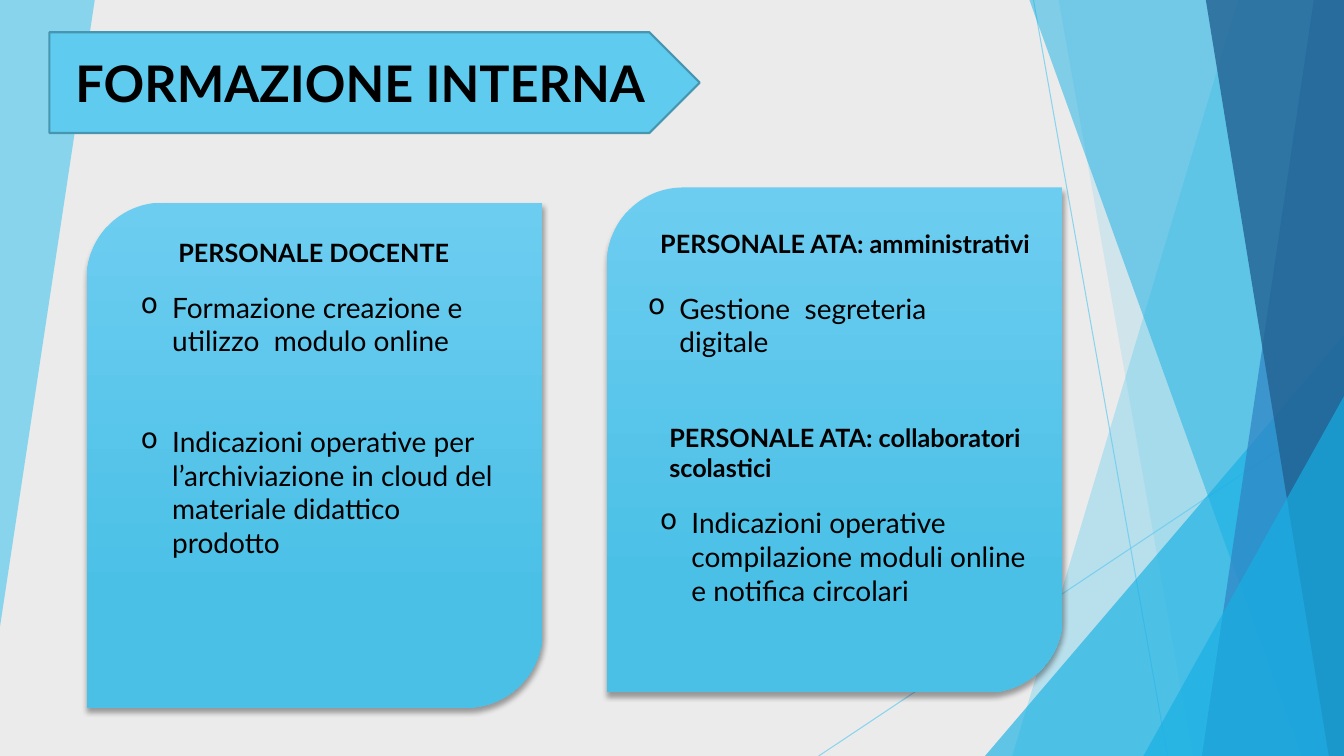
from lxml import etree
from pptx import Presentation
from pptx import util as u
from pptx.dml.color import RGBColor
from pptx.enum import shapes, text
from pptx.oxml.ns import qn

WIDTH, HEIGHT = 13.33, 7.5
FONT, INK = "Lato", "000000"
SKY, CYAN, BLUE, NAVY = "5FCBEF", "17B0E4", "2E83C3", "226292"

# Title banner
TITLE = ("FORMAZIONE INTERNA", 0.65, 0.47, 6.02, 0.71)
BANNER = (0.49, 0.32, 6.45, 1)

# Cards: left, top
CARDS = [(0.86, 2.01), (6.02, 1.86)]
CARD_SIZE = (4.52, 5.01)
CARD_GRADIENT = [(0, "6CCDF0"), (0.78, "4BC0E6")]

# Headings: text, left, top, width, height
HEADINGS = [
    ("PERSONALE DOCENTE", 1.67, 2.31, 3.32, 0.4),
    ("PERSONALE ATA: amministrativi", 6.45, 2.22, 4, 0.4),
    ("PERSONALE ATA: collaboratori scolastici", 6.54, 4.14, 4, 0.71),
]

# Bullet lists: items, left, top, width, height
TOPICS = [
    (["Formazione creazione e utilizzo  modulo online",
      "Indicazioni operative per l’archiviazione in cloud del materiale "
      "didattico prodotto"], 1.3, 2.83, 3.9, 2.79),
    (["Gestione  segreteria digitale"], 6.33, 2.84, 3.9, 0.77),
    (["Indicazioni operative compilazione moduli online e notifica circolari"],
     6.45, 4.97, 3.9, 1.45),
]

# Background decoration, back to front
LEFT_WEDGE = [(0, 0), (0.94, 0), (0, 6.22)]
RAYS = [(10.25, 0, 11.58, HEIGHT), (WIDTH, 4.03, 8.12, HEIGHT)]
# Facets reach the right edge: ("band", top x, bottom x) or
# ("corner", left, top), then colour and opacity
FACETS = [
    ("band", 12.28, 10.04, SKY, 36),
    ("band", 10.5, 11.83, SKY, 20),
    ("corner", 9.77, 3.33, CYAN, 66),
    ("band", 10.21, 12.91, CYAN, 50),
    ("band", 13.03, 11.92, BLUE, 70),
    ("band", 11.96, 13.18, NAVY, 80),
    ("corner", 11.34, 3.93, CYAN, 66),
]

prs = Presentation()
prs.slide_width, prs.slide_height = u.Inches(WIDTH), u.Inches(HEIGHT)
slide = prs.slides.add_slide(prs.slide_layouts[6])


def paint(color_format, color):
    color_format.rgb = RGBColor.from_string(color)


def solid(fill, color):
    fill.solid()
    paint(fill.fore_color, color)


def set_opacity(shape, percent):
    for color in shape._element.spPr.iter(qn("a:srgbClr")):
        etree.SubElement(color, qn("a:alpha"), val=str(percent * 1000))


def finish_facet(shape, color, opacity):
    shape.shadow.inherit = False
    solid(shape.fill, color)
    shape.line.fill.background()
    set_opacity(shape, opacity)


def add_polygon(points, color, opacity):
    corners = [(u.Inches(x), u.Inches(y)) for x, y in points]
    builder = slide.shapes.build_freeform(*corners[0])
    builder.add_line_segments(corners[1:], close=True)
    finish_facet(builder.convert_to_shape(), color, opacity)


def add_preset(kind, *box):
    shape = slide.shapes.add_shape(kind, *map(u.Inches, box))
    shape.shadow.inherit = False
    return shape


def add_text(lines, box, size, bold=False, bullets=False):
    frame = slide.shapes.add_textbox(*map(u.Inches, box)).text_frame
    frame.word_wrap = True
    frame.auto_size = text.MSO_AUTO_SIZE.NONE
    for i, line in enumerate(lines):
        par = frame.add_paragraph() if i else frame.paragraphs[0]
        par.text = line
        if i:
            par.space_before = u.Pt(48)
        if bullets:
            props = par._p.get_or_add_pPr()
            props.set("marL", str(u.Inches(0.31)))
            props.set("indent", str(-u.Inches(0.31)))
            etree.SubElement(props, qn("a:buChar"), char="o")
        par.font.name, par.font.size, par.font.bold = FONT, u.Pt(size), bold
        paint(par.font.color, INK)


# Background
solid(slide.background.fill, "EBEBEB")
add_polygon(LEFT_WEDGE, SKY, 70)
for ends in RAYS:
    ray = slide.shapes.add_connector(
        shapes.MSO_CONNECTOR.STRAIGHT, *map(u.Inches, ends))
    ray.line.width = u.Pt(0.75)
    solid(ray.line.fill, SKY)
    set_opacity(ray, 70)
    etree.SubElement(ray._element.spPr, qn("a:effectLst"))
for kind, a, b, color, opacity in FACETS:
    if kind == "band":
        add_polygon([(a, 0), (WIDTH, 0), (WIDTH, HEIGHT), (b, HEIGHT)],
                    color, opacity)
    else:
        corner = add_preset(shapes.MSO_SHAPE.ISOSCELES_TRIANGLE,
                            a, b, WIDTH - a, HEIGHT - b)
        corner.adjustments[0] = 1
        finish_facet(corner, color, opacity)

# Title
banner = add_preset(shapes.MSO_SHAPE.PENTAGON, *BANNER)
solid(banner.fill, SKY)
solid(banner.line.fill, "4696B1")
banner.line.width = u.Pt(1.5)
add_text([TITLE[0]], TITLE[1:], 36, bold=True)

# Cards with a soft drop shadow
for left, top in CARDS:
    card = add_preset(shapes.MSO_SHAPE.ROUND_2_DIAG_RECTANGLE,
                      left, top, *CARD_SIZE)
    card.line.fill.background()
    card.fill.gradient()
    card.fill.gradient_angle = 270
    for stop, (position, color) in zip(card.fill.gradient_stops, CARD_GRADIENT):
        stop.position = position
        paint(stop.color, color)
    drop = etree.SubElement(
        card._element.spPr.find(qn("a:effectLst")), qn("a:outerShdw"),
        blurRad=str(u.Pt(4)), dist=str(u.Pt(3)), dir="5400000", rotWithShape="0")
    shade = etree.SubElement(drop, qn("a:srgbClr"), val=INK)
    etree.SubElement(shade, qn("a:alpha"), val="35000")

# Card contents
for heading, *box in HEADINGS:
    add_text([heading], box, 18, bold=True)
for items, *box in TOPICS:
    add_text(items, box, 20, bullets=True)

prs.save("out.pptx")
